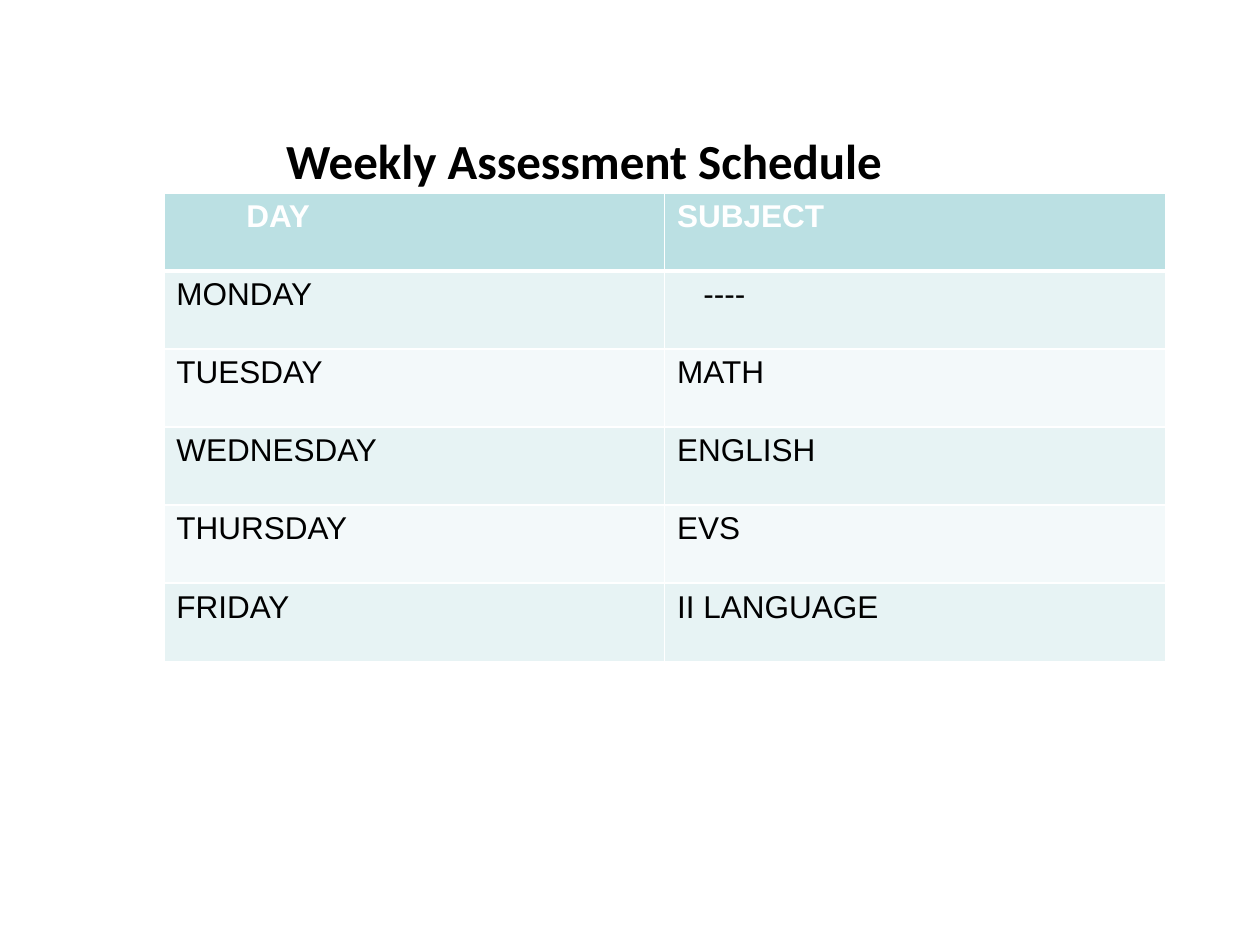
from dataclasses import dataclass

from lxml.etree import SubElement
from pptx import Presentation
from pptx.dml.color import RGBColor
from pptx.enum.text import MSO_AUTO_SIZE as AutoSize, PP_ALIGN as Align
from pptx.oxml.ns import qn
from pptx.util import Pt

COLORS = {
    "header": "BBE0E3",
    "odd": "E7F3F4",
    "even": "F3F9FA",
    "border": "FFFFFF",
    "header_text": "FFFFFF",
    "text": "000000",
}
TITLE_FORMAT = {"name": "Calibri", "size": Pt(28), "bold": True}
HEADER_FORMAT = {"name": "Arial", "size": Pt(18), "bold": True}
BODY_FORMAT = {**HEADER_FORMAT, "bold": False}
CELL_INSET = 7.2
ROW_HEIGHT = 44.64
COLUMN_WIDTH = 286.2


@dataclass(frozen=True)
class Entry:
    day: str
    subject: str
    day_indent: float = 0
    subject_indent: float = 0


SCHEDULE = [
    Entry("DAY", "SUBJECT", day_indent=40),
    Entry("MONDAY", "----", subject_indent=15),
    Entry("TUESDAY", "MATH"),
    Entry("WEDNESDAY", "ENGLISH"),
    Entry("THURSDAY", "EVS"),
    Entry("FRIDAY", "II LANGUAGE"),
]


def write_text(frame, text: str, formats: dict, color: str) -> None:
    para = frame.paragraphs[0]
    span = para.add_run()
    span.text = text
    for name, value in formats.items():
        setattr(span.font, name, value)
    span.font.color.rgb = RGBColor.from_string(COLORS[color])


def add_borders(cell, top: float, bottom: float) -> None:
    properties = cell._tc.get_or_add_tcPr()
    for side, width in {"L": 1, "R": 1, "T": top, "B": bottom}.items():
        line = SubElement(properties, qn(f"a:ln{side}"), w=str(Pt(width)))
        fill = SubElement(line, qn("a:solidFill"))
        SubElement(fill, qn("a:srgbClr"), val=COLORS["border"])


def fill_cell(cell, text: str, indent: float, row: int) -> None:
    is_header = row == 0
    add_borders(cell, top=3 if row == 1 else 1, bottom=3 if is_header else 1)
    cell.margin_left = Pt(CELL_INSET + indent)
    cell.fill.solid()
    shade = "header" if is_header else "odd" if row % 2 else "even"
    cell.fill.fore_color.rgb = RGBColor.from_string(COLORS[shade])
    write_text(
        cell.text_frame,
        text,
        HEADER_FORMAT if is_header else BODY_FORMAT,
        "header_text" if is_header else "text",
    )


def add_title(page, text: str) -> None:
    box = page.shapes.add_textbox(Pt(72.72), Pt(71.28), Pt(522), Pt(41.04))
    frame = box.text_frame
    frame.word_wrap = True
    frame.auto_size = AutoSize.SHAPE_TO_FIT_TEXT
    frame.paragraphs[0].alignment = Align.CENTER
    write_text(frame, text, TITLE_FORMAT, "text")


def add_schedule(page, entries: list[Entry]) -> None:
    table = page.shapes.add_table(
        len(entries), 2, Pt(93.6), Pt(110.16),
        Pt(2 * COLUMN_WIDTH), Pt(len(entries) * ROW_HEIGHT),
    ).table
    for column in table.columns:
        column.width = Pt(COLUMN_WIDTH)
    for row, entry in enumerate(entries):
        table.rows[row].height = Pt(ROW_HEIGHT)
        fill_cell(table.cell(row, 0), entry.day, entry.day_indent, row)
        fill_cell(table.cell(row, 1), entry.subject, entry.subject_indent, row)


def main() -> None:
    deck = Presentation()
    deck.slide_width, deck.slide_height = Pt(720), Pt(540)
    page = deck.slides.add_slide(deck.slide_layouts[6])
    add_title(page, "Weekly Assessment Schedule")
    add_schedule(page, SCHEDULE)
    deck.save("out.pptx")


if __name__ == "__main__":
    main()
